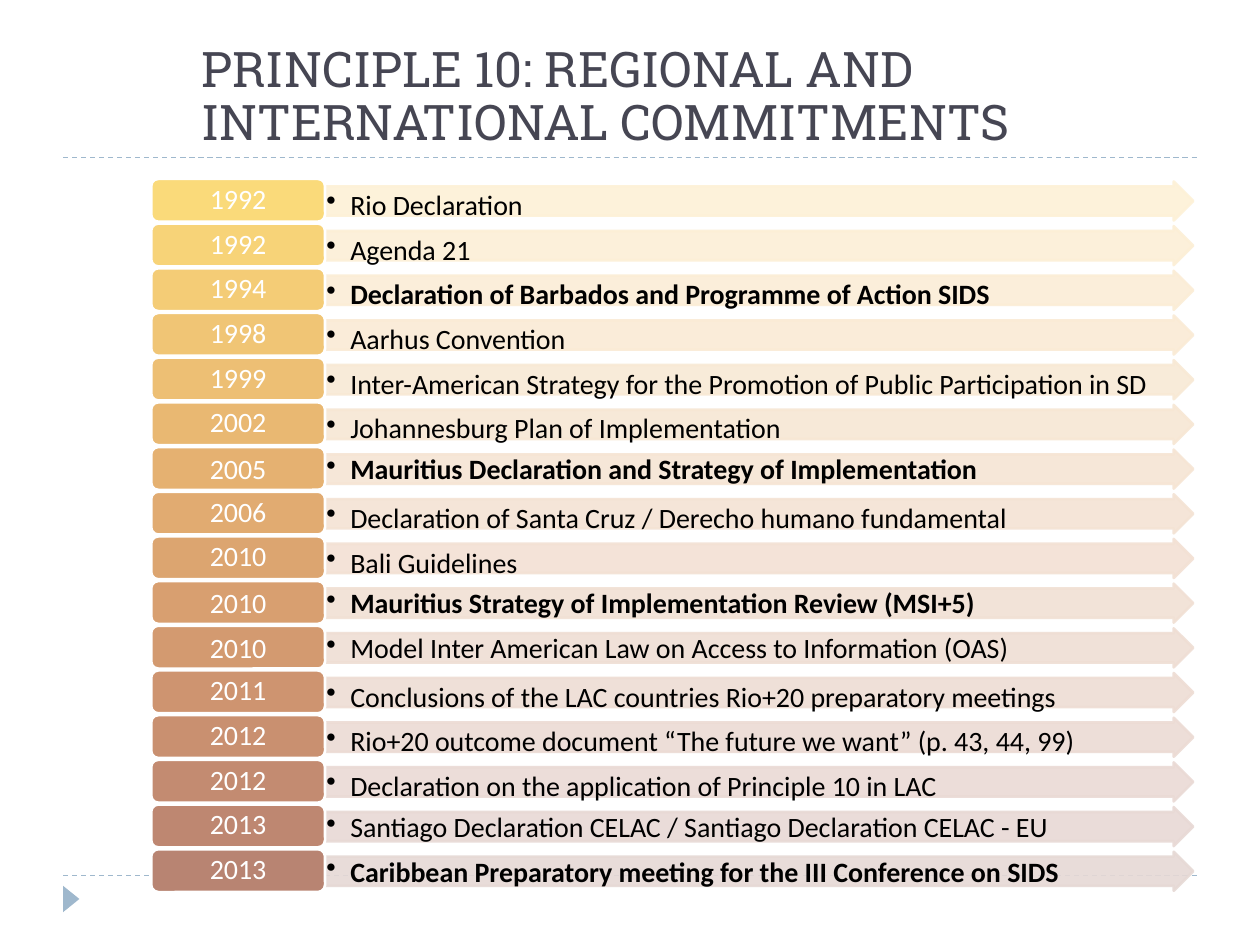
from dataclasses import dataclass

from lxml.etree import SubElement
from pptx import Presentation
from pptx.dml.color import RGBColor
from pptx.enum.dml import MSO_LINE
from pptx.enum.shapes import MSO_CONNECTOR, MSO_SHAPE
from pptx.enum.text import MSO_ANCHOR, MSO_AUTO_SIZE, PP_ALIGN
from pptx.oxml.ns import qn
from pptx.util import Inches, Pt

COLOURS = {
    "accent": "9FB8CD",
    "title": "464653",
    "text": "000000",
    "white": "FFFFFF",
}
BODY_FONT = "Calibri"
TITLE_FONT = "Roboto Slab"

FIRST_ROW_TOP = 1.42
ROW_PITCH = 5.32 / 15
TIGHT = 0.9


@dataclass
class Commitment:
    year: str
    text: str
    year_colour: str
    arrow_colour: str
    bold: bool = False
    tight_year: bool = True
    tight_text: bool = False


COMMITMENTS = [
    Commitment("1992", "Rio Declaration", "FADA7A", "FDF1D7"),
    Commitment("1992", "Agenda 21", "F7D378", "FCEFD6"),
    Commitment("1994", "Declaration of Barbados and Programme of Action SIDS",
               "F4CC76", "FBEDD6", bold=True),
    Commitment("1998", "Aarhus Convention", "F0C575", "FAEBD5"),
    Commitment("1999", "Inter-American Strategy for the Promotion of Public Participation in SD",
               "EDBF74", "F8E9D5"),
    Commitment("2002", "Johannesburg Plan of Implementation", "E9B872", "F7E7D4"),
    Commitment("2005", "Mauritius Declaration and Strategy of Implementation",
               "E5B171", "F6E5D4", bold=True, tight_year=False, tight_text=True),
    Commitment("2006", "Declaration of Santa Cruz / Derecho humano fundamental",
               "E1AB71", "F4E3D4"),
    Commitment("2010", "Bali Guidelines", "DCA570", "F3E1D4"),
    Commitment("2010", "Mauritius Strategy of Implementation Review (MSI+5)",
               "D89F70", "F1E0D4", bold=True, tight_year=False, tight_text=True),
    Commitment("2010", "Model Inter American Law on Access to Information (OAS)",
               "D39A70", "EFDED4", tight_year=False, tight_text=True),
    Commitment("2011", "Conclusions of the LAC countries Rio+20 preparatory meetings",
               "CE9470", "EEDDD4"),
    Commitment("2012", "Rio+20 outcome document “The future we want” (p. 43, 44, 99)",
               "C99070", "ECDBD4"),
    Commitment("2012", "Declaration on the application of Principle 10 in LAC",
               "C38B71", "EADAD5"),
    Commitment("2013", "Santiago Declaration CELAC / Santiago Declaration CELAC - EU",
               "BE8771", "E8D9D5", tight_text=True),
    Commitment("2013", "Caribbean Preparatory meeting for the III Conference on SIDS",
               "B88472", "E6D9D5", bold=True, tight_text=True),
]


def rgb(colour: str) -> RGBColor:
    return RGBColor.from_string(colour)


def add_divider(slide, top: float) -> None:
    line = slide.shapes.add_connector(
        MSO_CONNECTOR.STRAIGHT, Inches(0.5), Inches(top), Inches(9.5), Inches(top))
    line.line.color.rgb = rgb(COLOURS["accent"])
    line.line.width = Pt(0.75)
    line.line.dash_style = MSO_LINE.DASH
    SubElement(line._element.spPr, qn("a:effectLst"))


def add_corner_triangle(slide) -> None:
    triangle = slide.shapes.add_shape(
        MSO_SHAPE.ISOSCELES_TRIANGLE, Inches(0.46), Inches(7.07), Inches(0.21), Inches(0.13))
    triangle.rotation = 90
    triangle.shadow.inherit = False
    triangle.fill.solid()
    triangle.fill.fore_color.rgb = rgb(COLOURS["accent"])
    triangle.line.fill.background()


def format_title(slide) -> None:
    title = slide.shapes.title
    title.left, title.top = Inches(1.5), Inches(0.17)
    title.width, title.height = Inches(8), Inches(1.08)
    frame = title.text_frame
    frame.text = "PRINCIPLE 10: REGIONAL AND INTERNATIONAL COMMITMENTS"
    frame.word_wrap = True
    frame.auto_size = MSO_AUTO_SIZE.NONE
    frame.vertical_anchor = MSO_ANCHOR.BOTTOM
    paragraph = frame.paragraphs[0]
    paragraph.alignment = PP_ALIGN.LEFT
    paragraph.line_spacing = TIGHT
    paragraph.font.name = TITLE_FONT
    paragraph.font.size = Pt(28)
    paragraph.font.color.rgb = rgb(COLOURS["title"])


def add_box(group, preset, left: float, top: float, width: float, height: float,
            fill: str, outline: str):
    shape = group.shapes.add_shape(
        preset, Inches(left), Inches(top), Inches(width), Inches(height))
    shape.shadow.inherit = False
    shape.fill.solid()
    shape.fill.fore_color.rgb = rgb(fill)
    shape.line.color.rgb = rgb(outline)
    shape.line.width = Pt(1.5)
    return shape


def write(shape, text: str, colour: str, inset_x: float, inset_y: float, tight: bool):
    """Fill a shape with one line of body text and return its paragraph."""
    frame = shape.text_frame
    frame.text = text
    frame.word_wrap = True
    frame.margin_left = frame.margin_right = Inches(inset_x)
    frame.margin_top = frame.margin_bottom = Inches(inset_y)
    paragraph = frame.paragraphs[0]
    if tight:
        paragraph.line_spacing = TIGHT
    paragraph.font.name = BODY_FONT
    paragraph.font.size = Pt(16)
    paragraph.font.color.rgb = rgb(colour)
    return paragraph


def make_translucent(shape) -> None:
    for colour in shape._element.spPr.iter(qn("a:srgbClr")):
        SubElement(colour, qn("a:alpha"), val="90000")


def add_bullet(paragraph) -> None:
    properties = paragraph._p.get_or_add_pPr()
    properties.set("marL", str(Inches(0.19)))
    properties.set("indent", str(-Inches(0.19)))
    bullet = properties.makeelement(qn("a:buChar"), {"char": "•"})
    properties.insert_element_before(bullet, "a:tabLst", "a:defRPr", "a:extLst")


def add_commitment(group, commitment: Commitment, top: float) -> None:
    arrow = add_box(group, MSO_SHAPE.RIGHT_ARROW, 2.58, top + 0.02, 6.89, 0.31,
                    commitment.arrow_colour, commitment.arrow_colour)
    arrow.adjustments[0] = 0.75
    make_translucent(arrow)
    paragraph = write(arrow, commitment.text, COLOURS["text"], 0.01, 0.01, commitment.tight_text)
    arrow.text_frame.vertical_anchor = MSO_ANCHOR.TOP
    paragraph.alignment = PP_ALIGN.LEFT
    paragraph.level = 1
    add_bullet(paragraph)
    paragraph.font.bold = commitment.bold

    badge = add_box(group, MSO_SHAPE.ROUNDED_RECTANGLE, 1.2, top, 1.38, 0.34,
                    commitment.year_colour, COLOURS["white"])
    paragraph = write(badge, commitment.year, COLOURS["white"], 0.07, 0.03, commitment.tight_year)
    badge.text_frame.vertical_anchor = MSO_ANCHOR.MIDDLE
    paragraph.alignment = PP_ALIGN.CENTER


def main() -> None:
    presentation = Presentation()
    presentation.slide_width, presentation.slide_height = Inches(10), Inches(7.5)
    slide = presentation.slides.add_slide(presentation.slide_layouts[5])
    for top in (6.95, 1.25):
        add_divider(slide, top)
    add_corner_triangle(slide)
    format_title(slide)
    timeline = slide.shapes.add_group_shape()
    for row, commitment in enumerate(COMMITMENTS):
        add_commitment(timeline, commitment, FIRST_ROW_TOP + row * ROW_PITCH)
    presentation.save("out.pptx")


if __name__ == "__main__":
    main()
